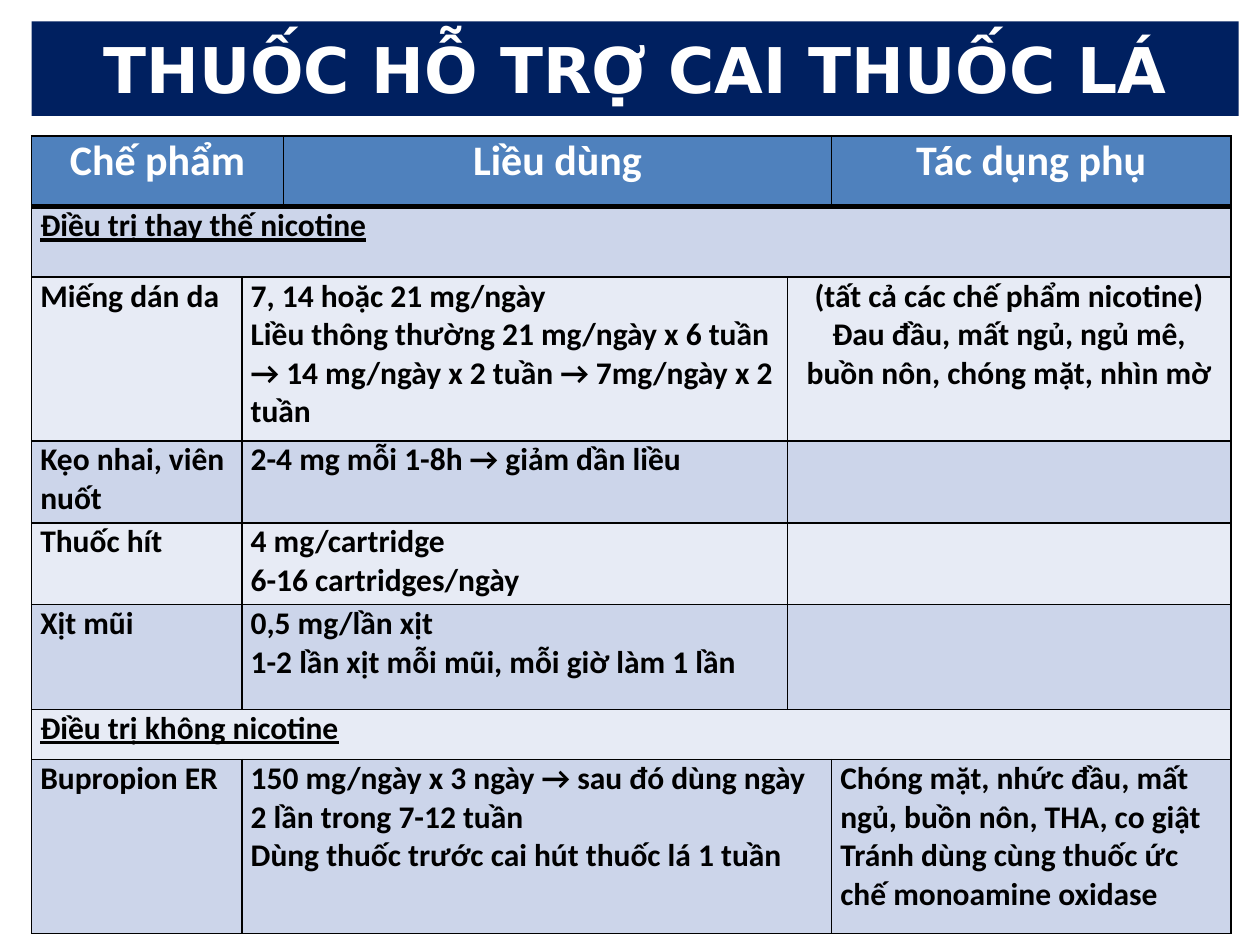
from lxml import etree
from pptx import Presentation
from pptx.dml.color import RGBColor
from pptx.enum import text as t
from pptx.oxml.ns import qn
from pptx.util import Inches, Pt

# Content: each row lists (column span, paragraphs); "\n" is a line break
TITLE = "THUỐC HỖ TRỢ CAI THUỐC LÁ"
COLS = [1.67, 0.33, 4, 0.35, 3.17]
HIGHS = [0.56, 0.56, 1.3, 0.65, 0.65, 0.83, 0.4, 1.38]
ROWS = [
    [(2, ["Chế phẩm"]), (2, ["Liều dùng"]), (1, ["Tác dụng phụ"])],
    [(5, ["Điều trị thay thế nicotine"])],
    [(1, ["Miếng dán da"]),
     (2, ["7, 14 hoặc 21 mg/ngày\nLiều thông thường 21 mg/ngày x 6 tuần",
          "→ 14 mg/ngày x 2 tuần → 7mg/ngày x 2 tuần"]),
     (2, ["(tất cả các chế phẩm nicotine)\n"
          "Đau đầu, mất ngủ, ngủ mê, buồn nôn, chóng mặt, nhìn mờ"])],
    [(1, ["Kẹo nhai, viên nuốt"]), (2, ["2-4 mg mỗi 1-8h → giảm dần liều"]), (2, [])],
    [(1, ["Thuốc hít"]), (2, ["4 mg/cartridge\n6-16 cartridges/ngày"]), (2, [])],
    [(1, ["Xịt mũi"]),
     (2, ["0,5 mg/lần xịt\n1-2 lần xịt mỗi mũi, mỗi giờ làm 1 lần"]), (2, [])],
    [(5, ["Điều trị không nicotine"])],
    [(1, ["Bupropion ER"]),
     (3, ["150 mg/ngày x 3 ngày → sau đó dùng ngày 2 lần trong 7-12 tuần",
          "Dùng thuốc trước cai hút thuốc lá 1 tuần"]),
     (1, ["Chóng mặt, nhức đầu, mất ngủ, buồn nôn, THA, co giật",
          "Tránh dùng cùng thuốc ức chế monoamine oxidase"])],
]
HEAD, BANDS = "4F81BD", ["E7EBF5", "CCD5EA"]
ALIGN = t.PP_ALIGN


def paint(fill, color):
    fill.solid()
    fill.fore_color.rgb = RGBColor.from_string(color)


def write(par, words, size, face, color, align, line=False):
    par.alignment = align
    for i, part in enumerate(words.split("\n")):
        if i:
            par.add_line_break()
        run = par.add_run()
        run.text = part
        font = run.font
        font.size, font.name, font.bold = Pt(size), face, True
        if line:
            font.underline = True
        paint(font.fill, color)


def border(cell, top, bottom):
    props = cell._tc.get_or_add_tcPr()
    sides = {"lnL": 1, "lnR": 1, "lnT": top, "lnB": bottom}
    for i, (side, width) in enumerate(sides.items()):
        edge = etree.Element(qn("a:" + side), w=str(Pt(width)))
        fill = etree.SubElement(edge, qn("a:solidFill"))
        etree.SubElement(fill, qn("a:srgbClr"), val="000000")
        props.insert(i, edge)


prs = Presentation()
prs.slide_width, prs.slide_height = Inches(10), Inches(7.5)
slide = prs.slides.add_slide(prs.slide_layouts[5])

# Title bar
title = slide.shapes.title
title.left, title.top = Inches(0.25), Inches(0.17)
title.width, title.height = Inches(9.58), Inches(0.75)
paint(title.fill, "002060")
frame = title.text_frame
frame.auto_size = t.MSO_AUTO_SIZE.NONE
frame.vertical_anchor = t.MSO_ANCHOR.MIDDLE
write(frame.paragraphs[0], TITLE, 36, "DejaVu Sans", "FFFFFF", ALIGN.CENTER)

# Table grid
table = slide.shapes.add_table(
    len(ROWS), len(COLS), Inches(0.25), Inches(1.08),
    Inches(sum(COLS)), Inches(sum(HIGHS))).table
for col, width in zip(table.columns, COLS):
    col.width = Inches(width)
for row, high in zip(table.rows, HIGHS):
    row.height = Inches(high)

# Table cells
for r, row in enumerate(ROWS):
    head, group = r == 0, len(row) == 1
    c = 0
    for n, (span, pars) in enumerate(row):
        cell = table.cell(r, c)
        if span > 1:
            cell.merge(table.cell(r, c + span - 1))
        for k in range(c, c + span):
            part = table.cell(r, k)
            paint(part.fill, HEAD if head else BANDS[r % 2])
            border(part, 3 if r == 1 else 1, 3 if head else 1)
        cell.margin_left = cell.margin_right = Inches(0.07)
        cell.margin_top = cell.margin_bottom = 0
        center = head or (r == 2 and n == 2)
        align = ALIGN.CENTER if center else ALIGN.JUSTIFY if group else ALIGN.LEFT
        frame = cell.text_frame
        for i, words in enumerate(pars):
            par = frame.add_paragraph() if i else frame.paragraphs[0]
            write(par, words, 24 if head else 18, "Calibri",
                  "FFFFFF" if head else "000000", align, group)
        c += span

prs.save("out.pptx")
